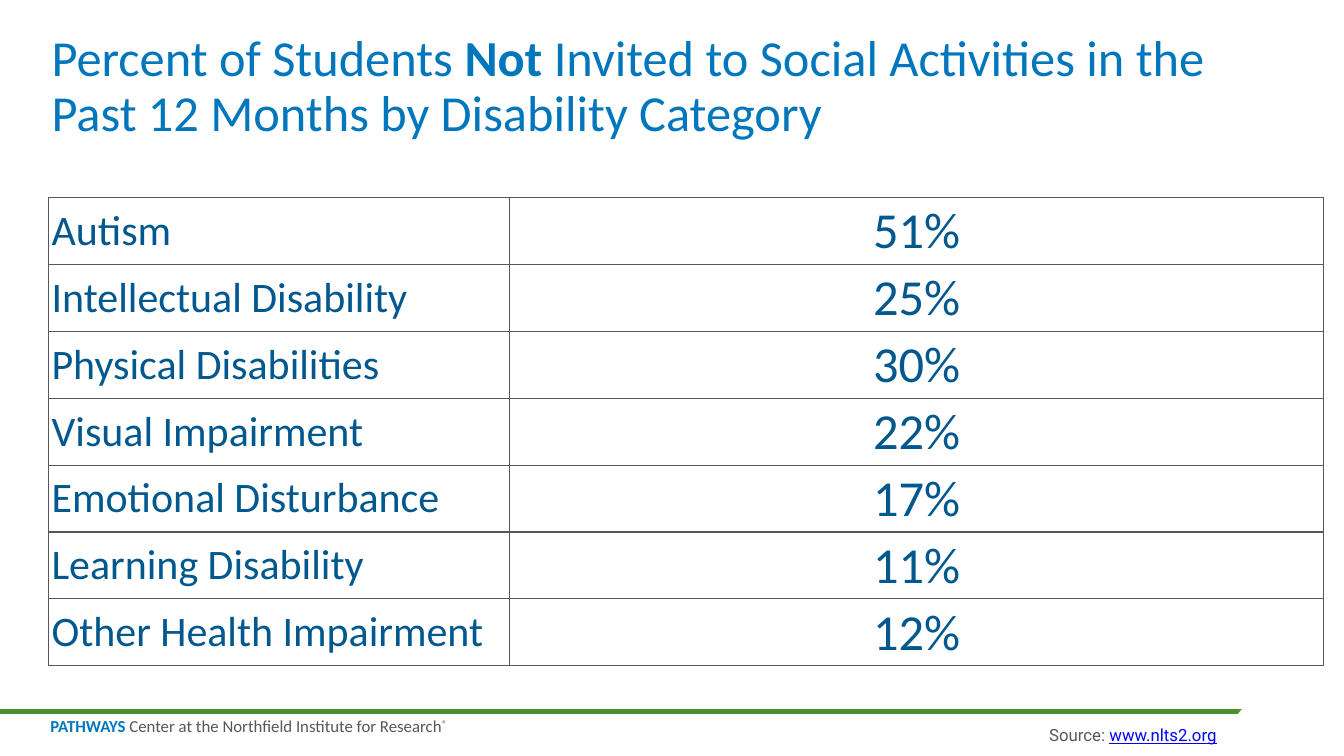
from lxml.etree import SubElement
from pptx import Presentation
from pptx.dml.color import RGBColor
from pptx.enum.shapes import MSO_CONNECTOR as Link, MSO_SHAPE as Shape
from pptx.enum.text import MSO_ANCHOR as Anchor, MSO_AUTO_SIZE as Fit, PP_ALIGN as Align
from pptx.oxml.ns import qn
from pptx.util import Cm, Pt

BLUE, NAVY, GREY = "0076BD", "00588E", "59565A"
GREEN, WHITE, LINK = "4C902D", "FFFFFF", "0000FF"
RATES = [
    ("Autism", "51%"),
    ("Intellectual Disability", "25%"),
    ("Physical Disabilities", "30%"),
    ("Visual Impairment", "22%"),
    ("Emotional Disturbance", "17%"),
    ("Learning Disability", "11%"),
    ("Other Health Impairment", "12%"),
]


def color(code):
    return RGBColor.from_string(code)


class Page:
    def __init__(self, deck, font="Calibri"):
        self.slide = deck.slides.add_slide(deck.slide_layouts[5])
        self.shapes = self.slide.shapes
        self.font = font

    def style(self, run, size, tint, bold=False, font=None):
        face = run.font
        face.name, face.size, face.bold = font or self.font, Pt(size), bold
        face.color.rgb = color(tint)
        return run

    def add_runs(self, para, parts, size, font=None):
        """Add (text, colour, bold) parts as runs and return the runs."""
        runs = []
        for text, tint, bold in parts:
            run = para.add_run()
            run.text = text
            runs.append(self.style(run, size, tint, bold, font))
        return runs

    def frame(self, shape, inset, anchor, fit=Fit.NONE, wrap=True):
        """Set up the text frame and return its first paragraph."""
        frame = shape.text_frame
        frame.margin_left = frame.margin_right = Cm(inset)
        frame.margin_top = frame.margin_bottom = Cm(inset)
        frame.vertical_anchor, frame.auto_size = anchor, fit
        frame.word_wrap = wrap
        return frame.paragraphs[0]

    def title(self, box, parts, size):
        shape = self.shapes.title
        shape.left, shape.top, shape.width, shape.height = map(Cm, box)
        para = self.frame(shape, 0.08, Anchor.BOTTOM)
        para.alignment, para.line_spacing = Align.LEFT, 0.9
        self.add_runs(para, parts, size)

    def text(self, box, parts, size, inset=0, anchor=Anchor.TOP,
             align=Align.LEFT, wrap=True, spacing=1.0, font=None):
        shape = self.shapes.add_textbox(*map(Cm, box))
        para = self.frame(shape, inset, anchor, Fit.SHAPE_TO_FIT_TEXT, wrap)
        para.alignment, para.line_spacing = align, spacing
        return self.add_runs(para, parts, size, font)

    def rule(self, left, right, top, tint, weight):
        line = self.shapes.add_connector(
            Link.STRAIGHT, Cm(left), Cm(top), Cm(right), Cm(top))
        line.line.color.rgb, line.line.width = color(tint), Pt(weight)
        SubElement(line._element.spPr, qn("a:effectLst"))

    def oval(self, box, tint, turn):
        shape = self.shapes.add_shape(Shape.OVAL, *map(Cm, box))
        shape.shadow.inherit = False
        shape.fill.solid()
        shape.fill.fore_color.rgb = color(tint)
        shape.line.fill.background()
        shape.rotation = turn

    def border(self, cell, tint):
        props = cell._tc.get_or_add_tcPr()
        for side in ("lnL", "lnR", "lnT", "lnB"):
            edge = SubElement(props, qn(f"a:{side}"), w=str(Pt(1)))
            fill = SubElement(edge, qn("a:solidFill"))
            SubElement(fill, qn("a:srgbClr"), val=tint)

    def table(self, left, top, widths, height, rows, looks):
        """Draw rows; looks gives (size, alignment) for each column."""
        grid = self.shapes.add_table(
            len(rows), len(widths), Cm(left), Cm(top),
            Cm(sum(widths)), Cm(height * len(rows))).table
        grid.first_row = grid.horz_banding = False
        for col, width in zip(grid.columns, widths):
            col.width = Cm(width)
        for row, values in zip(grid.rows, rows):
            for cell, value, (size, align) in zip(row.cells, values, looks):
                self.border(cell, GREY)
                cell.fill.background()
                cell.margin_left = cell.margin_right = Cm(0.08)
                cell.margin_top = cell.margin_bottom = Cm(0.08)
                cell.vertical_anchor = Anchor.MIDDLE
                para = cell.text_frame.paragraphs[0]
                para.text, para.alignment = value, align
                self.style(para.runs[0], size, NAVY)


def main():
    deck = Presentation()
    deck.slide_width, deck.slide_height = Cm(33.87), Cm(19.05)
    page = Page(deck)

    page.rule(0, 33.02, 17.93, GREEN, 3)
    footer = page.text(
        (1.27, 18.11, 10.21, 0.43),
        [("PATHWAYS", BLUE, True),
         (" Center at the Northfield Institute for Research", GREY, False),
         ("®", GREY, False)],
        12, wrap=False, spacing=0.85)
    footer[-1].font._element.set("baseline", "30000")
    page.oval((30.89, 17.2, 3.02, 1.47), WHITE, 332.1)

    page.title(
        (1.22, 1.17, 30.43, 2.49),
        [("Percent of Students ", BLUE, False),
         ("Not ", BLUE, True),
         ("Invited to Social Activities in the Past 12 Months "
          "by Disability Category", BLUE, False)],
        36)
    page.table(1.22, 4.98, (11.63, 20.5), 1.67, RATES,
               ((30, Align.LEFT), (36, Align.CENTER)))
    source = page.text(
        (20.57, 18.16, 10.19, 0.71),
        [("Source: ", GREY, False), ("www.nlts2.org", LINK, False)],
        12, inset=0.1, anchor=Anchor.MIDDLE, align=Align.RIGHT, font="Roboto")
    source[-1].font.underline = True

    deck.save("out.pptx")


if __name__ == "__main__":
    main()
